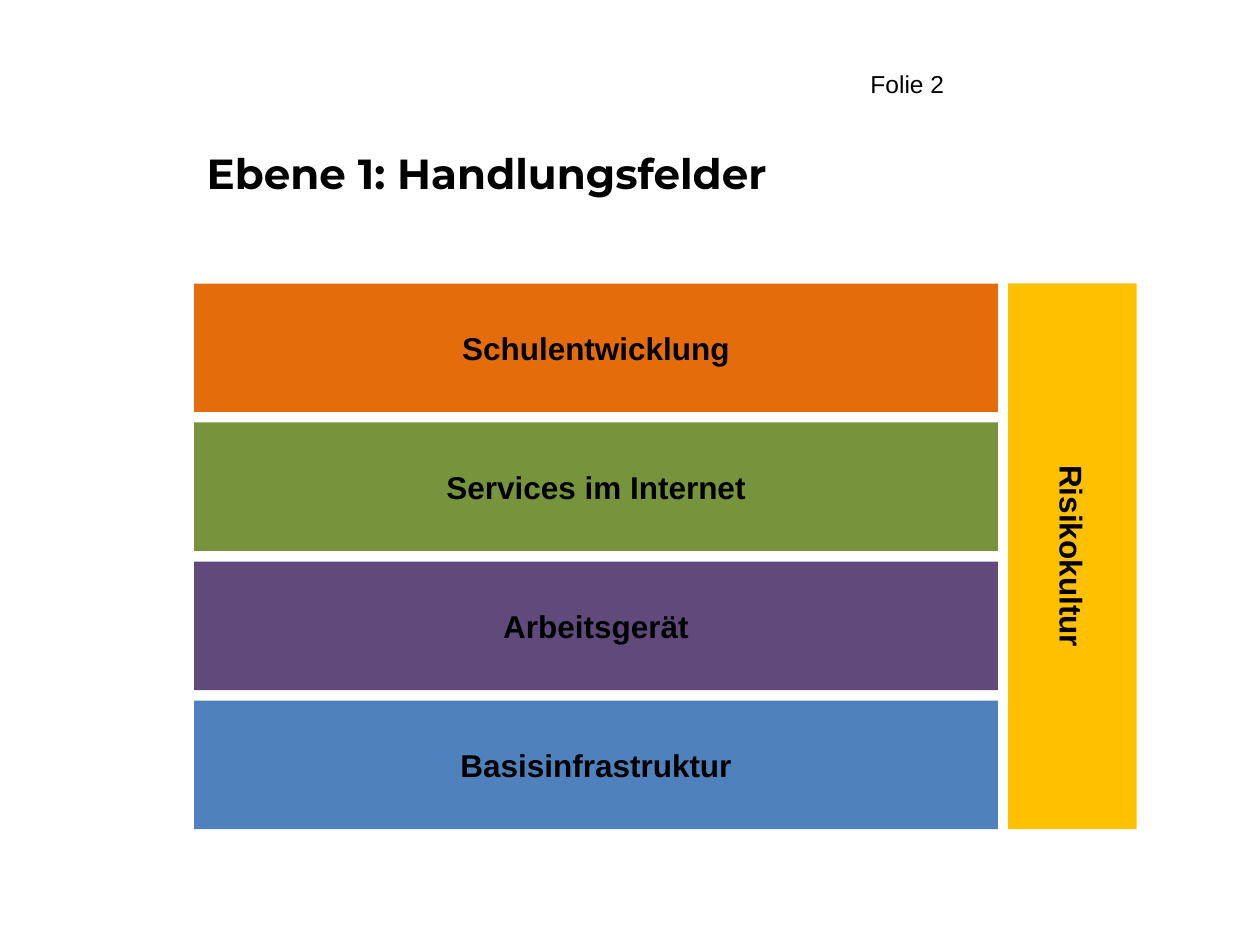
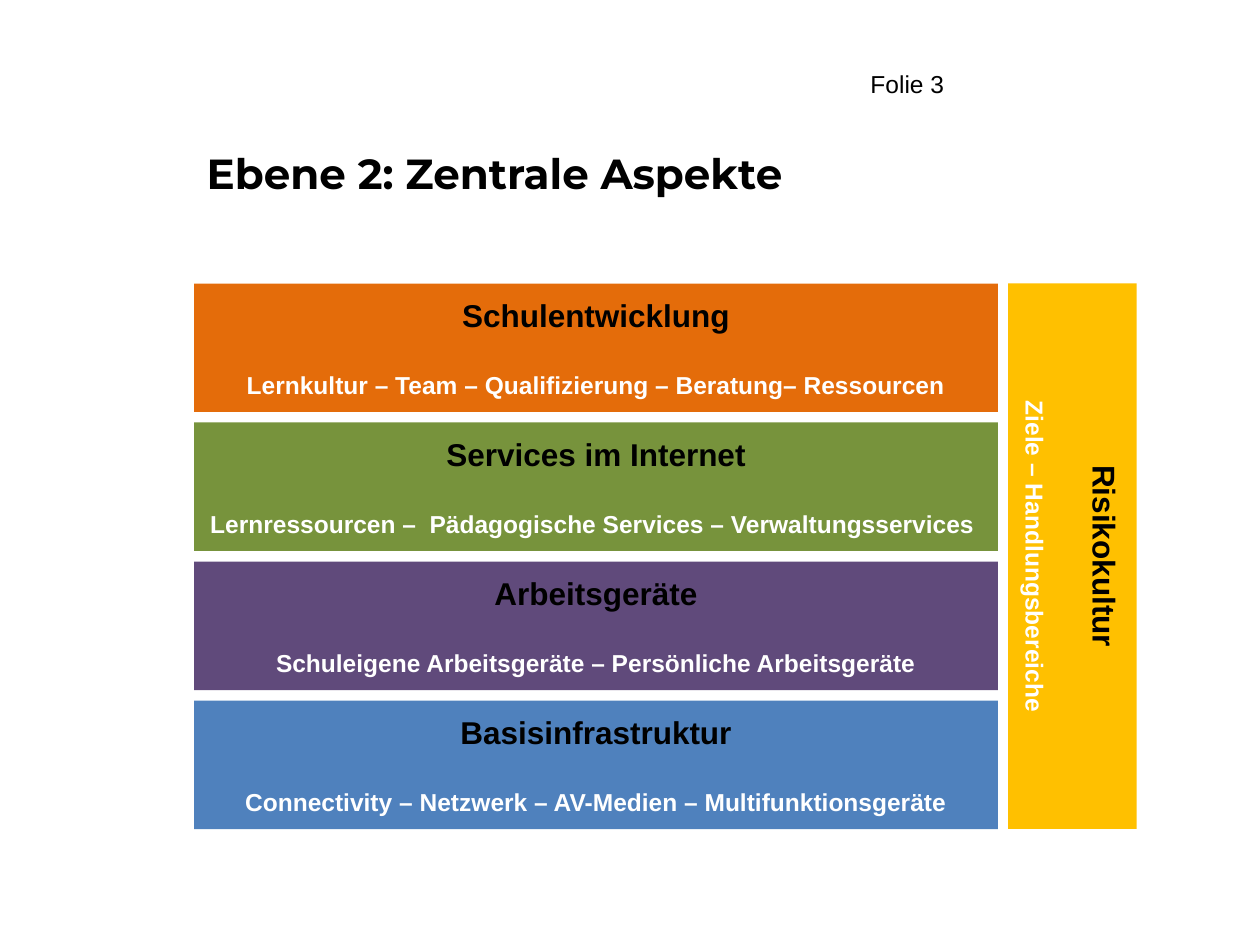
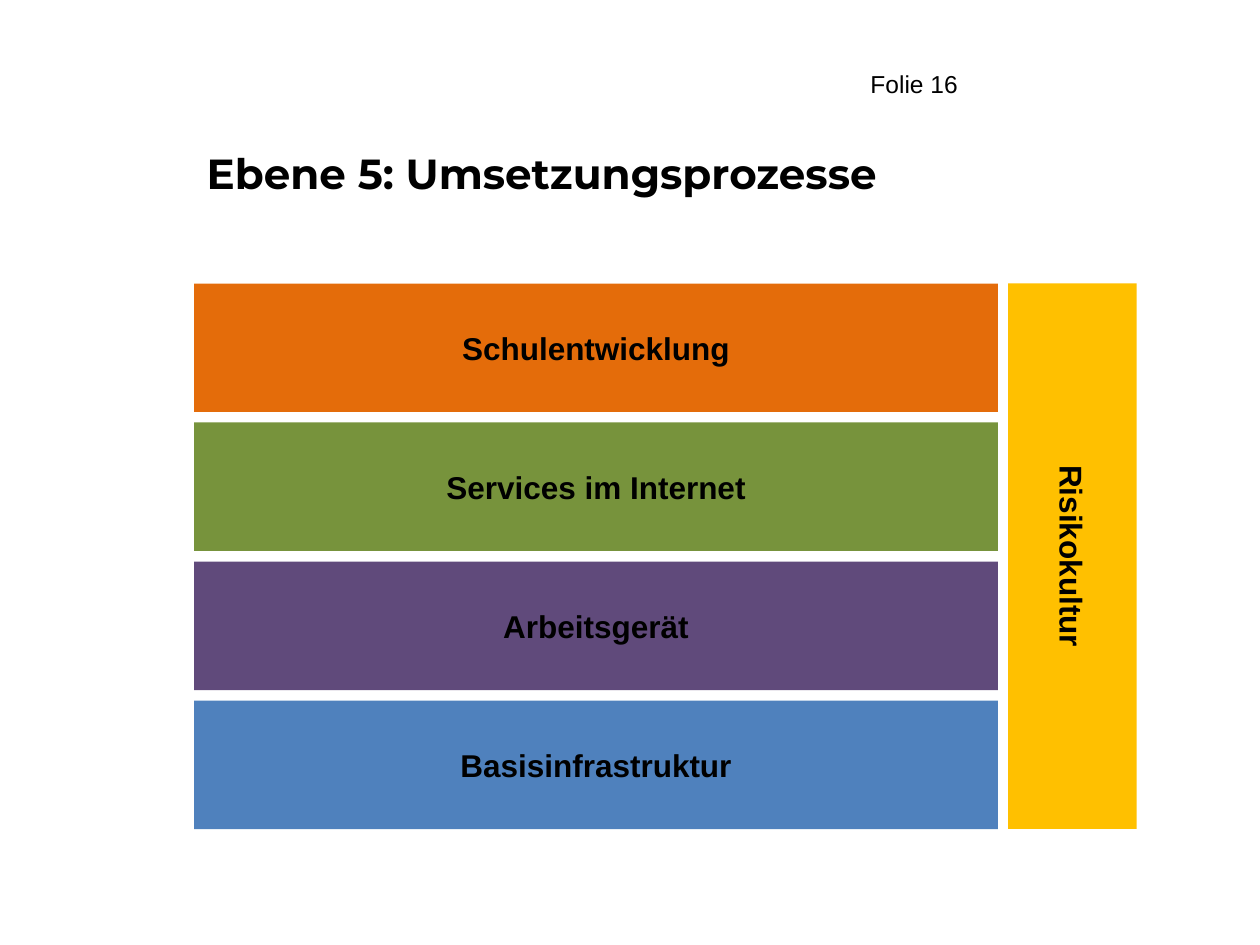
from dataclasses import dataclass

from pptx import Presentation
from pptx.dml.color import RGBColor
from pptx.enum.shapes import MSO_SHAPE
from pptx.enum.text import MSO_ANCHOR, MSO_AUTO_SIZE, PP_ALIGN
from pptx.slide import Slide
from pptx.text.text import _Paragraph
from pptx.util import Inches, Pt

COLORS = {
    "text": "000000",
    "detail": "FFFFFF",
    "school": "E46C0A",
    "services": "77933C",
    "devices": "604A7B",
    "base": "4F81BD",
    "risk": "FFC000",
}
BODY_FONT = "Arial"
TITLE_FONT = "Montserrat"

LEFT = Inches(1.54)
TOP = Inches(2.25)
BAND_WIDTH = Inches(6.38)
BAND_HEIGHT = Inches(1.02)
GAP = Inches(0.08)
STACK_HEIGHT = Inches(4.33)


@dataclass(frozen=True)
class Field:
    color: str
    name: str
    detail: str = ""


@dataclass(frozen=True)
class Level:
    number: int
    title: str
    bands: tuple[Field, ...]
    risk: Field


OVERVIEW = (
    Field("school", "Schulentwicklung"),
    Field("services", "Services im Internet"),
    Field("devices", "Arbeitsgerät"),
    Field("base", "Basisinfrastruktur"),
)
ASPECTS = (
    Field("school", "Schulentwicklung",
          "Lernkultur – Team – Qualifizierung – Beratung– Ressourcen"),
    Field("services", "Services im Internet",
          "Lernressourcen –  Pädagogische Services – Verwaltungsservices "),
    Field("devices", "Arbeitsgeräte",
          "Schuleigene Arbeitsgeräte – Persönliche Arbeitsgeräte"),
    Field("base", "Basisinfrastruktur",
          "Connectivity – Netzwerk – AV-Medien – Multifunktionsgeräte"),
)
RISK = Field("risk", "Risikokultur")
LEVELS = (
    Level(2, "Ebene 1: Handlungsfelder", OVERVIEW, RISK),
    Level(3, "Ebene 2: Zentrale Aspekte", ASPECTS,
          Field("risk", "Risikokultur", "Ziele – Handlungsbereiche")),
    Level(16, "Ebene 5: Umsetzungsprozesse", OVERVIEW, RISK),
)


def rgb(key: str) -> RGBColor:
    return RGBColor.from_string(COLORS[key])


def write(p: _Paragraph, text: str, size: int, color: str = "text",
          font: str = BODY_FONT, bold: bool = True,
          align: PP_ALIGN = PP_ALIGN.CENTER) -> None:
    p.text = text
    p.alignment = align
    p.font.name = font
    p.font.size = Pt(size)
    p.font.bold = bold
    p.font.color.rgb = rgb(color)


def add_field(s: Slide, field: Field, left: int, top: int, width: int,
              rotation: int = 0) -> None:
    sp = s.shapes.add_shape(MSO_SHAPE.RECTANGLE, left, top, width, BAND_HEIGHT)
    sp.rotation = rotation
    sp.shadow.inherit = False
    sp.fill.solid()
    sp.fill.fore_color.rgb = rgb(field.color)
    sp.line.fill.background()
    tf = sp.text_frame
    tf.word_wrap = True
    tf.vertical_anchor = MSO_ANCHOR.MIDDLE
    write(tf.paragraphs[0], field.name, 18)
    if field.detail:
        p = tf.add_paragraph()
        p.space_before = Pt(20.7)
        write(p, field.detail, 14, "detail")


def add_title(s: Slide, text: str) -> None:
    sp = s.shapes.title
    sp.left, sp.top = LEFT, Inches(1.12)
    sp.width, sp.height = Inches(7.86), Inches(0.59)
    tf = sp.text_frame
    tf.auto_size = MSO_AUTO_SIZE.NONE
    tf.vertical_anchor = MSO_ANCHOR.TOP
    write(tf.paragraphs[0], text, 24, font=TITLE_FONT, align=PP_ALIGN.LEFT)


def add_number(s: Slide, number: int) -> None:
    sp = s.shapes.add_textbox(Inches(6.81), Inches(0.5), Inches(3.31), Inches(0.34))
    tf = sp.text_frame
    tf.word_wrap = True
    write(tf.paragraphs[0], f"Folie {number}", 14, bold=False, align=PP_ALIGN.LEFT)


def add_level(prs: Presentation, level: Level) -> None:
    s = prs.slides.add_slide(prs.slide_layouts[5])
    add_title(s, level.title)
    add_number(s, level.number)
    pitch = (STACK_HEIGHT - BAND_HEIGHT) // (len(level.bands) - 1)
    for i, band in enumerate(level.bands):
        add_field(s, band, LEFT, TOP + i * pitch, BAND_WIDTH)
    offset = (STACK_HEIGHT - BAND_HEIGHT) // 2
    add_field(s, level.risk, LEFT + BAND_WIDTH + GAP - offset, TOP + offset,
              STACK_HEIGHT, rotation=90)


def main() -> None:
    prs = Presentation()
    prs.slide_width, prs.slide_height = Inches(10), Inches(7.5)
    for level in LEVELS:
        add_level(prs, level)
    prs.save("out.pptx")


if __name__ == "__main__":
    main()
